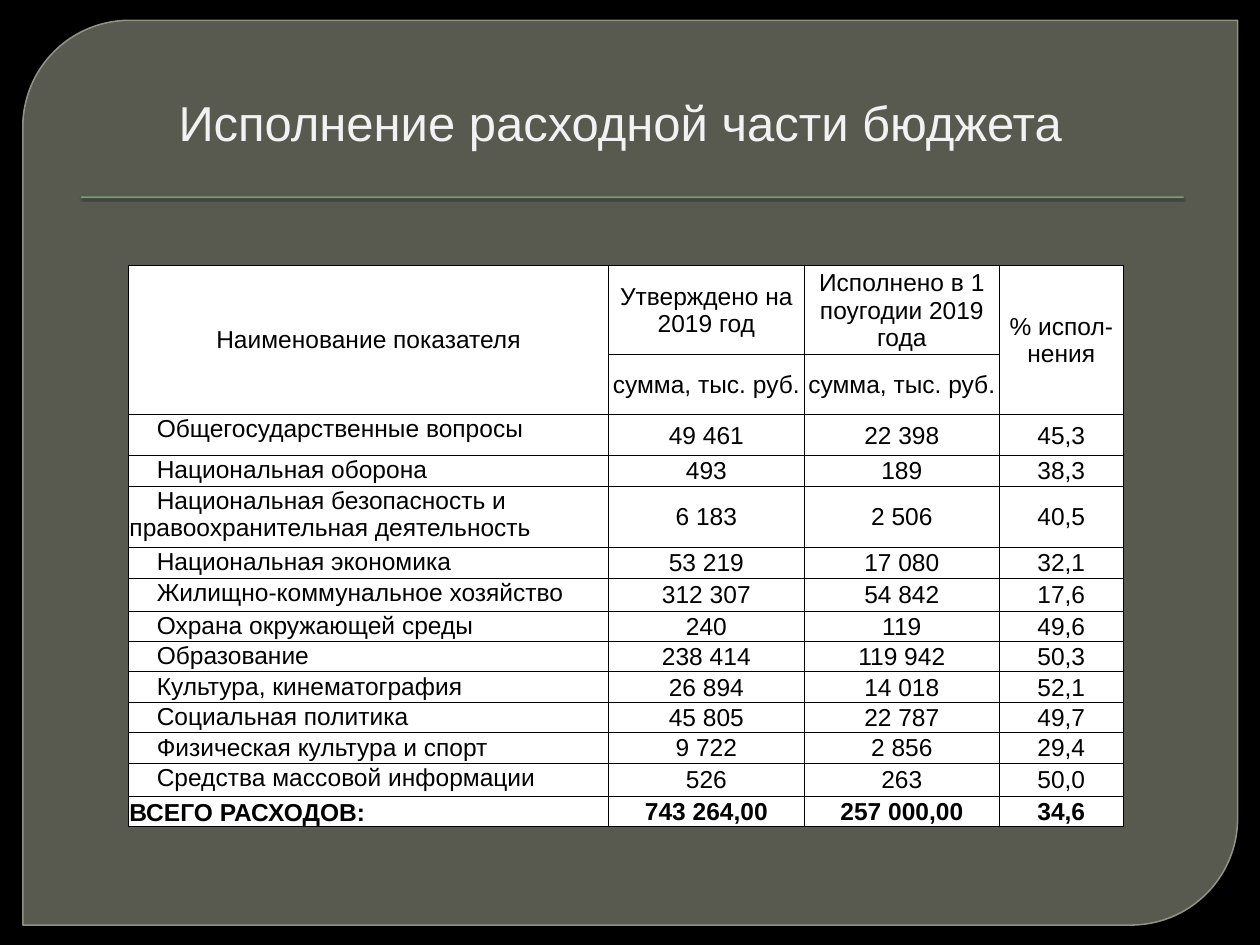
from dataclasses import dataclass

from lxml.etree import SubElement
from pptx import Presentation
from pptx.dml.color import RGBColor
from pptx.enum.shapes import MSO_SHAPE as Shape
from pptx.enum.text import MSO_ANCHOR as Anchor, PP_ALIGN as Align
from pptx.oxml.ns import qn
from pptx.util import Cm, Pt


@dataclass(frozen=True)
class Theme:
    backdrop: str = "000000"
    panel: str = "888B7B"
    panel_edge: str = "9DA090"
    rule: str = "72A376"
    title: str = "F2F2F2"
    cell: str = "FFFFFF"
    ink: str = "000000"
    font: str = "Arial"
    title_size: float = 28
    table_size: float = 14
    border: float = 0.5


THEME = Theme()

COLUMN_WIDTHS = [9.68, 3.94, 3.94, 2.49]
LINE, TALL_LINE = 0.58, 0.66
HEADER = [
    (1.69, ["Наименование показателя", "Утверждено на 2019 год",
            "Исполнено в 1 поугодии 2019 года", "% испол-нения"]),
    (1.13, ["", "сумма, тыс. руб.", "сумма, тыс. руб.", ""]),
]
EXPENSES = [
    (0.83, ["Общегосударственные вопросы", "49 461", "22 398", "45,3"]),
    (LINE, ["Национальная оборона", "493", "189", "38,3"]),
    (1.24, ["Национальная безопасность и правоохранительная деятельность",
            "6 183", "2 506", "40,5"]),
    (LINE, ["Национальная экономика", "53 219", "17 080", "32,1"]),
    (TALL_LINE, ["Жилищно-коммунальное хозяйство", "312 307", "54 842", "17,6"]),
    (LINE, ["Охрана окружающей среды", "240", "119", "49,6"]),
    (LINE, ["Образование", "238 414", "119 942", "50,3"]),
    (LINE, ["Культура, кинематография", "26 894", "14 018", "52,1"]),
    (LINE, ["Социальная политика", "45 805", "22 787", "49,7"]),
    (LINE, ["Физическая культура и спорт", "9 722", "2 856", "29,4"]),
    (TALL_LINE, ["Средства массовой информации", "526", "263", "50,0"]),
]
TOTAL = [(LINE, ["ВСЕГО РАСХОДОВ:", "743 264,00", "257 000,00", "34,6"])]


def paint(fill, color, alpha=None):
    fill.solid()
    fill.fore_color.rgb = RGBColor.from_string(color)
    if alpha:
        color_node = next(fill._xPr.iter(qn("a:srgbClr")))
        SubElement(color_node, qn("a:alpha"), val=str(alpha * 1000))


def add_text(paragraph, text, size, color, bold=False):
    run = paragraph.add_run()
    run.text = text
    run.font.name = THEME.font
    run.font.size = Pt(size)
    run.font.bold = bold
    run.font.color.rgb = RGBColor.from_string(color)


def add_panel(slide, left, top, width, height):
    """Backdrop panel with two rounded corners and the rule under the title."""
    panel = slide.shapes.add_shape(
        Shape.ROUND_2_DIAG_RECTANGLE, Cm(left), Cm(top), Cm(width), Cm(height))
    panel.adjustments[0], panel.adjustments[1] = 0.118, 0
    panel.shadow.inherit = False
    paint(panel.fill, THEME.panel, alpha=65)
    paint(panel.line.fill, THEME.panel_edge, alpha=88)
    panel.line.width = Pt(0.87)

    rule = slide.shapes.add_shape(
        Shape.RECTANGLE, Cm(left + 1.17), Cm(top + 3.55), Cm(width - 2.26), Cm(0.03))
    paint(rule.fill, THEME.rule)
    rule.line.fill.background()
    rule.shadow.inherit = False
    effects = rule._element.spPr.find(qn("a:effectLst"))
    shadow = SubElement(effects, qn("a:outerShdw"), blurRad=str(Pt(1)),
                        dist=str(Pt(1)), dir="5400000")
    shade = SubElement(shadow, qn("a:srgbClr"), val=THEME.backdrop)
    SubElement(shade, qn("a:alpha"), val="75000")


def add_title(slide, left, top, width, height):
    frame = slide.shapes.add_textbox(
        Cm(left), Cm(top), Cm(width), Cm(height)).text_frame
    frame.word_wrap = True
    frame.vertical_anchor = Anchor.BOTTOM
    heading = frame.paragraphs[0]
    heading.alignment = Align.CENTER
    add_text(heading, "Исполнение расходной части бюджета",
             THEME.title_size, THEME.title)


def style_cell(cell):
    cell.margin_left = cell.margin_right = cell.margin_top = Cm(0.02)
    cell.margin_bottom = 0
    properties = cell._tc.get_or_add_tcPr()
    for side in ("lnL", "lnR", "lnT", "lnB"):
        border = SubElement(properties, qn(f"a:{side}"), w=str(Pt(THEME.border)))
        fill = SubElement(border, qn("a:solidFill"))
        SubElement(fill, qn("a:srgbClr"), val=THEME.ink)
    paint(cell.fill, THEME.cell)


def add_budget_table(slide, left, top):
    rows = HEADER + EXPENSES + TOTAL
    table = slide.shapes.add_table(
        len(rows), len(COLUMN_WIDTHS), Cm(left), Cm(top),
        Cm(sum(COLUMN_WIDTHS)), Cm(sum(height for height, _ in rows))).table
    table.first_row = table.horz_banding = False
    for column, width in zip(table.columns, COLUMN_WIDTHS):
        column.width = Cm(width)

    for r, (height, texts) in enumerate(rows):
        table.rows[r].height = Cm(height)
        is_header, is_total = r < len(HEADER), r == len(rows) - 1
        for c, text in enumerate(texts):
            cell = table.cell(r, c)
            style_cell(cell)
            paragraph = cell.text_frame.paragraphs[0]
            if c or is_header:
                cell.vertical_anchor = Anchor.MIDDLE
                paragraph.alignment = Align.CENTER
            else:
                cell.vertical_anchor = Anchor.BOTTOM if is_total else Anchor.TOP
                paragraph.alignment = Align.LEFT
                if not is_total:
                    # First-line indent of an expense name
                    paragraph._p.get_or_add_pPr().set("indent", str(Cm(0.55)))
            if text:
                add_text(paragraph, text, THEME.table_size, THEME.ink, is_total)

    # Outer header cells span both header rows
    for c in (0, len(COLUMN_WIDTHS) - 1):
        table.cell(0, c).merge(table.cell(1, c))


def main():
    deck = Presentation()
    deck.slide_width, deck.slide_height = Cm(25.4), Cm(19.05)
    slide = deck.slides.add_slide(deck.slide_layouts[6])
    paint(slide.background.fill, THEME.backdrop)
    add_panel(slide, 0.46, 0.41, 24.49, 18.64 - 0.41 + 0.01)
    add_title(slide, 1.07, 0.74, 22.86, 2.44)
    add_budget_table(slide, 2.59, 5.35)
    deck.save("out.pptx")


if __name__ == "__main__":
    main()
